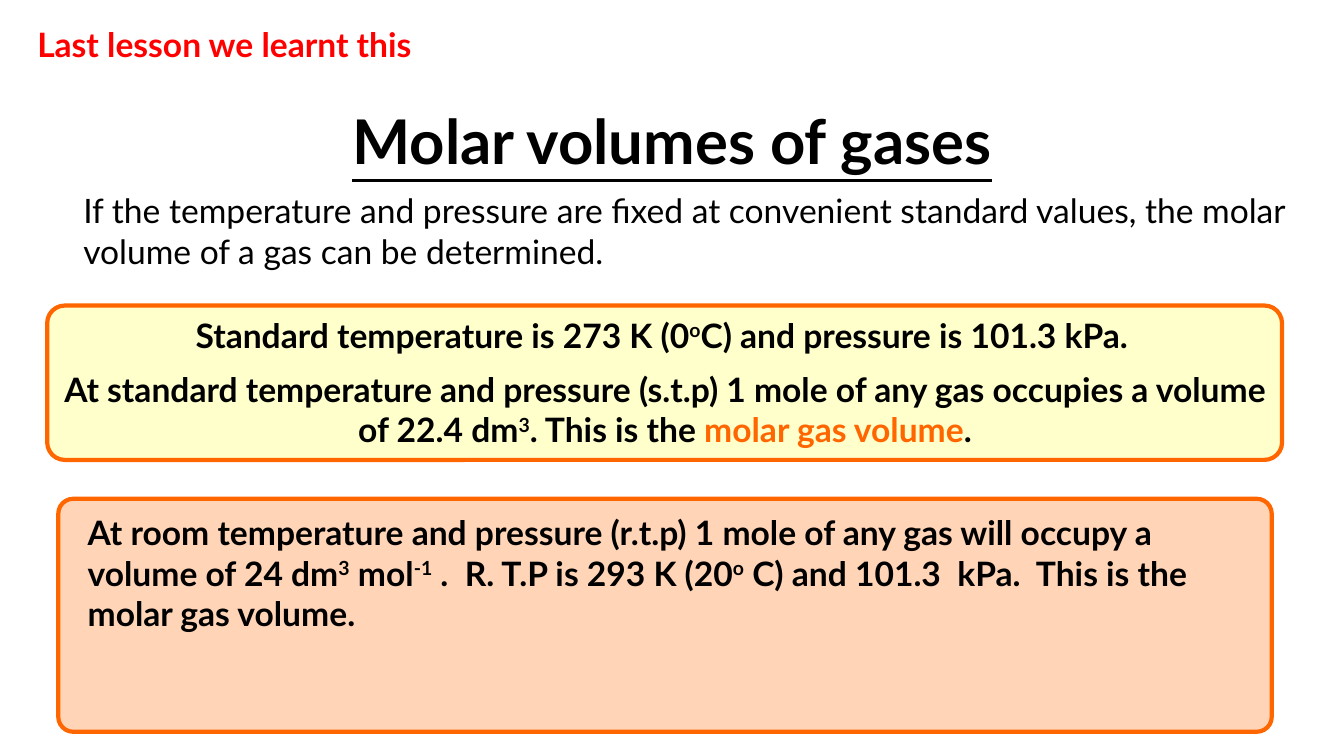
from dataclasses import dataclass

from pptx import Presentation
from pptx import util as u
from pptx.dml.color import RGBColor
from pptx.enum import shapes, text


@dataclass(frozen=True)
class Theme:
    font: str = "Lato"
    title_size: int = 44
    body_size: int = 24
    border_width: int = 3
    ink: str = "000000"
    recap: str = "FF0000"
    accent: str = "FF6600"
    standard_fill: str = "FFFFCC"
    room_fill: str = "FFD4B7"


THEME = Theme()
SUPER, ACCENT = "super", "accent"


def add_text(s, box, parts, size=THEME.body_size, color=THEME.ink, bold=True,
             centred=False):
    """Place one paragraph; a part is plain text or a (text, style) pair."""
    tf = s.shapes.add_textbox(*map(u.Cm, box)).text_frame
    tf.word_wrap = True
    p = tf.paragraphs[0]
    p.alignment = text.PP_ALIGN.CENTER if centred else text.PP_ALIGN.LEFT
    for part in parts:
        words, style = (part, None) if isinstance(part, str) else part
        r = p.add_run()
        r.text = words
        r.font.name = THEME.font
        r.font.size = u.Pt(size)
        r.font.bold = bold
        r.font.color.rgb = RGBColor.from_string(
            THEME.accent if style == ACCENT else color)
        if style == SUPER:
            r._r.get_or_add_rPr().set("baseline", "30000")
    return tf


def add_panel(s, box, fill, corner):
    sp = s.shapes.add_shape(shapes.MSO_SHAPE.ROUNDED_RECTANGLE, *map(u.Cm, box))
    sp.adjustments[0] = corner
    sp.shadow.inherit = False
    sp.fill.solid()
    sp.fill.fore_color.rgb = RGBColor.from_string(fill)
    sp.line.color.rgb = RGBColor.from_string(THEME.accent)
    sp.line.width = u.Pt(THEME.border_width)


def add_title(s, box):
    tf = add_text(s, box, ["Molar volumes of gases"], THEME.title_size,
                  centred=True)
    tf.vertical_anchor = text.MSO_ANCHOR.MIDDLE
    p = tf.paragraphs[0]
    p.line_spacing = 0.9
    p.runs[0].font.underline = True


def add_standard_conditions(s, box):
    x, y, w, h = box
    add_panel(s, box, THEME.standard_fill, 0.114)
    add_text(s, (x + 0.87, y + 0.1, w - 1.68, 1.27), [
        "Standard temperature is 273 K (0", ("o", SUPER),
        "C) and pressure is 101.3 kPa. "], centred=True)
    add_text(s, (x + 0.05, y + 1.47, w - 0.08, 2.31), [
        "At standard temperature and pressure (s.t.p) 1 mole of any gas "
        "occupies a volume of 22.4 dm", ("3", SUPER), ". This is the ",
        ("molar gas volume", ACCENT), "."], centred=True)


def add_room_conditions(s, box):
    x, y, w, h = box
    add_panel(s, box, THEME.room_fill, 0.064)
    add_text(s, (x + 0.49, y + 0.21, w - 0.94, 3.33), [
        "At room temperature and pressure (r.t.p) 1 mole of any gas will "
        "occupy a volume of 24 dm", ("3", SUPER), " mol", ("-1", SUPER),
        " .  R. T.P is 293 K (20", ("o", SUPER),
        " C) and 101.3  kPa.  This is the molar gas volume."])


def main():
    prs = Presentation()
    prs.slide_width, prs.slide_height = u.Cm(33.87), u.Cm(19.05)
    s = prs.slides.add_slide(prs.slide_layouts[6])

    # Title and introduction
    add_title(s, (2.34, 1.8, 29.21, 3.68))
    add_text(s, (1.85, 4.67, 31.01, 2.31), [
        "If the temperature and pressure are fixed at convenient standard "
        "values, the molar volume of a gas can be determined."], bold=False)

    # Molar volume under each set of conditions
    add_standard_conditions(s, (1.19, 7.7, 31.12, 3.89))
    add_room_conditions(s, (1.47, 12.57, 30.58, 5.87))

    # Recap label
    add_text(s, (0.69, 0.48, 30.05, 1.27), ["Last lesson we learnt this"],
             color=THEME.recap)

    prs.save("out.pptx")


if __name__ == "__main__":
    main()
